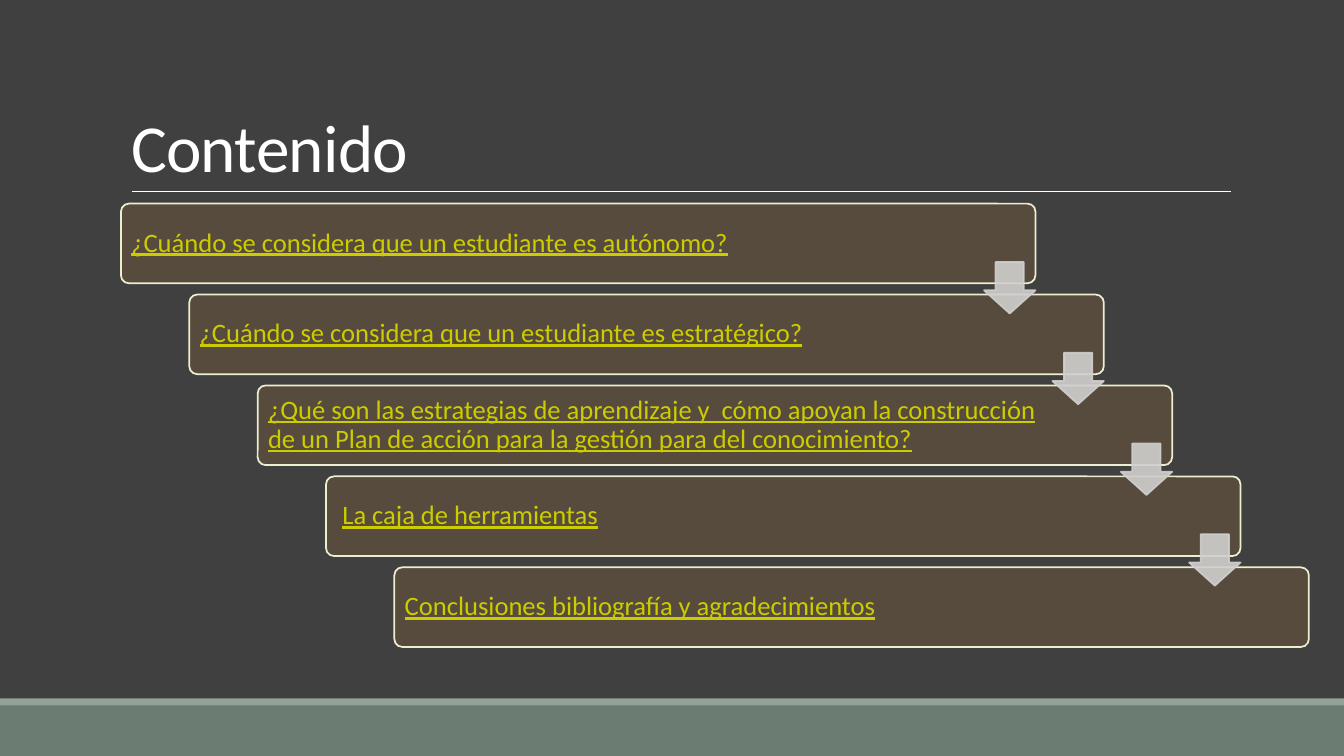
from lxml import etree
from pptx import Presentation
from pptx.dml.color import RGBColor
from pptx.enum import shapes, text
from pptx.oxml.ns import qn
from pptx.util import Inches, Pt

BACKGROUND = RGBColor(0x40, 0x40, 0x40)
WHITE = RGBColor(0xFF, 0xFF, 0xFF)
GREEN = RGBColor(0x6B, 0x7D, 0x72)
PALE_GREEN = RGBColor(0x93, 0xA2, 0x99)
BROWN = RGBColor(0x56, 0x4B, 0x3C)
CREAM = RGBColor(0xEC, 0xED, 0xD1)
YELLOW = RGBColor(0xCC, 0xCC, 0x00)
GREY = RGBColor(0xD1, 0xD0, 0xCE)


def add_run(p, words, size=19, color=YELLOW, underline=True):
    r = p.add_run()
    r.text = words
    r.font.name = "Calibri"
    r.font.size = Pt(size)
    r.font.color.rgb = color
    r.font.underline = underline
    return r


def add_box(s, kind, x, y, w, h, fill, line=None):
    sp = s.shapes.add_shape(kind, Inches(x), Inches(y), Inches(w), Inches(h))
    sp.shadow.inherit = False
    sp.fill.solid()
    sp.fill.fore_color.rgb = fill
    if line is None:
        sp.line.fill.background()
    else:
        sp.line.color.rgb = line
        sp.line.width = Pt(1.25)
    return sp


prs = Presentation()
prs.slide_width, prs.slide_height = Inches(13.33), Inches(7.5)
s = prs.slides.add_slide(prs.slide_layouts[5])
s.background.fill.solid()
s.background.fill.fore_color.rgb = BACKGROUND

# Footer bands
add_box(s, shapes.MSO_SHAPE.RECTANGLE, 0, 7, 13.33, 0.5, GREEN)
add_box(s, shapes.MSO_SHAPE.RECTANGLE, 0, 6.93, 13.33, 0.07, PALE_GREEN)

# Title and the rule below it
rule = s.shapes.add_connector(shapes.MSO_CONNECTOR.STRAIGHT, Inches(1.31),
                              Inches(1.9), Inches(12.21), Inches(1.9))
rule.line.color.rgb = WHITE
rule.line.width = Pt(0.5)
etree.SubElement(rule._element.spPr, qn("a:effectLst"))

title = s.shapes.title
title.left, title.top = Inches(1.2), Inches(0.31)
title.width, title.height = Inches(11), Inches(1.59)
tf = title.text_frame
tf.word_wrap = True
tf.auto_size = text.MSO_AUTO_SIZE.NONE
tf.vertical_anchor = text.MSO_ANCHOR.BOTTOM
p = tf.paragraphs[0]
p.alignment = text.PP_ALIGN.LEFT
p.line_spacing = 0.85
r = add_run(p, "Contenido", size=48, color=WHITE, underline=None)
r.font._element.set("spc", "-50")

# Staircase of topics
topics = [
    "¿Cuándo se considera que un estudiante es autónomo?",
    "¿Cuándo se considera que un estudiante es estratégico?",
    "¿Qué son las estrategias de aprendizaje y  cómo apoyan la construcción "
    "de un Plan de acción para la gestión para del conocimiento?",
    " La caja de herramientas",
    "Conclusiones bibliografía y agradecimientos",
]
STEP_X, STEP_Y = 0.678, 0.902
for i, topic in enumerate(topics):
    sp = add_box(s, shapes.MSO_SHAPE.ROUNDED_RECTANGLE, 1.2 + i * STEP_X,
                 2.02 + i * STEP_Y, 9.07, 0.79, BROWN, CREAM)
    sp.adjustments[0] = 0.1
    tf = sp.text_frame
    tf.word_wrap = True
    tf.vertical_anchor = text.MSO_ANCHOR.MIDDLE
    tf.margin_left = tf.margin_top = tf.margin_bottom = Inches(0.08)
    tf.margin_right = Inches(1.27)
    p = tf.paragraphs[0]
    p.alignment = text.PP_ALIGN.LEFT
    p.line_spacing = 0.9
    if topic.startswith(" "):
        add_run(p, " ", color=WHITE, underline=None)
    add_run(p, topic.strip())

# Arrows from each step to the next
for i in range(len(topics) - 1):
    arrow = add_box(s, shapes.MSO_SHAPE.DOWN_ARROW, 9.76 + i * STEP_X,
                    2.6 + i * 0.9, 0.51, 0.51, GREY, GREY)
    arrow.adjustments[0], arrow.adjustments[1] = 0.55, 0.45
    for color in arrow._element.spPr.iter(qn("a:srgbClr")):
        etree.SubElement(color, qn("a:alpha"), val="90000")

prs.save("out.pptx")
